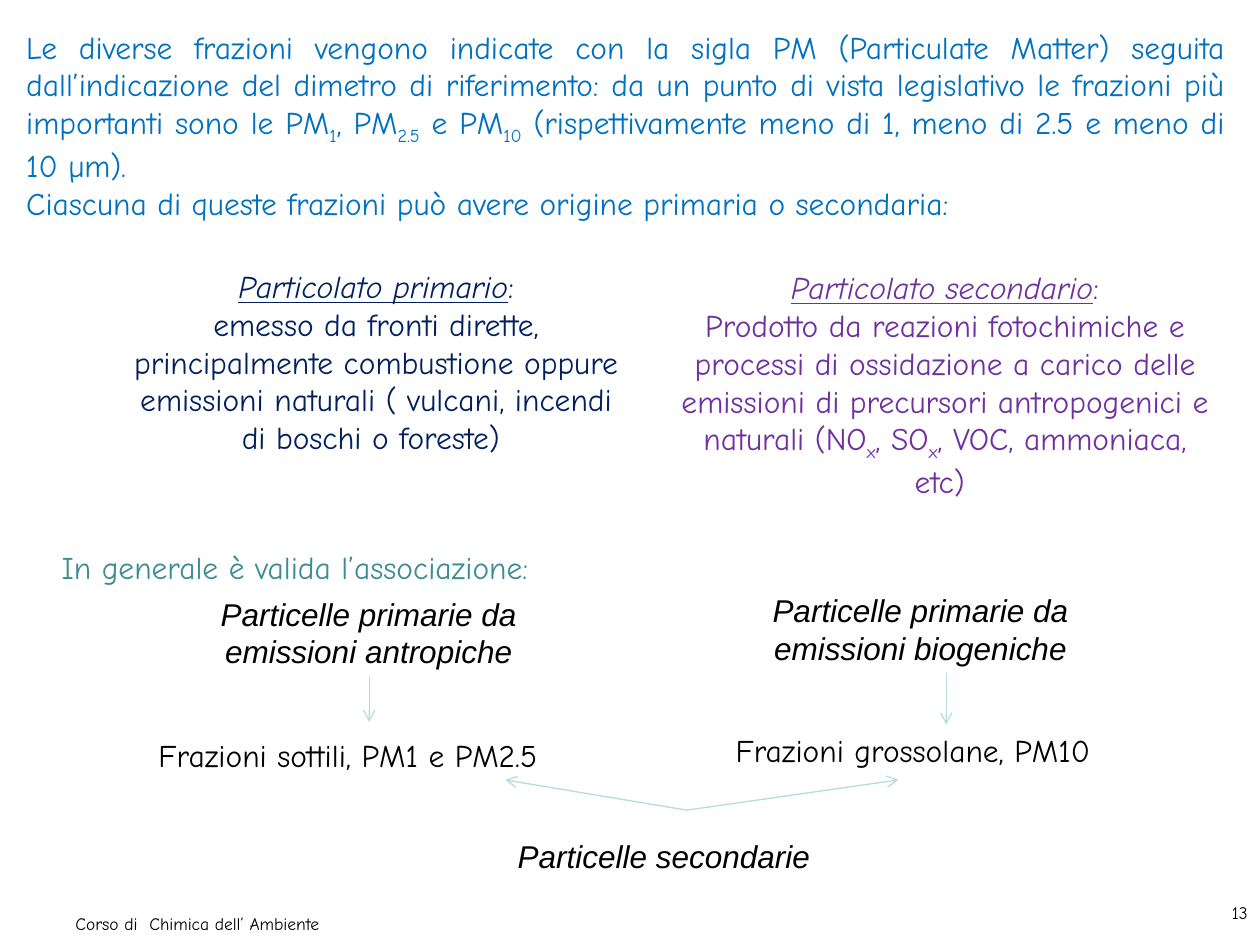
from typing import NamedTuple

from lxml import etree
from pptx import Presentation
from pptx.dml.color import RGBColor
from pptx.enum import shapes, text
from pptx.oxml import ns
from pptx.util import Inches, Pt

COMIC, ARIAL = "Comic Neue", "Arial"
BLACK, ARROW = "000000", "B6DCDF"
LEFT, CENTER = text.PP_ALIGN.LEFT, text.PP_ALIGN.CENTER
RIGHT, JUSTIFY = text.PP_ALIGN.RIGHT, text.PP_ALIGN.JUSTIFY


class Run(NamedTuple):
    text: str
    subscript: bool = False
    heading: bool = False


class Block(NamedTuple):
    left: float
    top: float
    width: float
    height: float
    paragraphs: list[list[Run]]
    color: str = BLACK
    font: str = COMIC
    size: int = 18
    align: text.PP_ALIGN = LEFT
    italic: bool = False


class Arrow(NamedTuple):
    x1: float
    y1: float
    x2: float
    y2: float


def rgb(value: str) -> RGBColor:
    return RGBColor.from_string(value)


def formula(*parts: str) -> list[Run]:
    """Alternate normal and subscript runs."""
    return [Run(part, subscript=i % 2 == 1) for i, part in enumerate(parts)]


def heading(title: str) -> list[Run]:
    return [Run(title, heading=True), Run(":")]


def add_block(s, block: Block) -> None:
    sp = s.shapes.add_textbox(Inches(block.left), Inches(block.top),
                              Inches(block.width), Inches(block.height))
    tf = sp.text_frame
    tf.word_wrap = True
    for i, runs in enumerate(block.paragraphs):
        p = tf.add_paragraph() if i else tf.paragraphs[0]
        p.alignment = block.align
        for run in runs:
            r = p.add_run()
            r.text = run.text
            r.font.name = block.font
            r.font.size = Pt(block.size)
            r.font.color.rgb = rgb(block.color)
            r.font.italic = block.italic or run.heading
            r.font.underline = run.heading
            if run.subscript:
                r.font._element.set("baseline", "-25000")


def add_arrow(s, arrow: Arrow) -> None:
    line = s.shapes.add_connector(shapes.MSO_CONNECTOR.STRAIGHT,
                                  *(Inches(v) for v in arrow))
    line.line.color.rgb = rgb(ARROW)
    line.line.width = Pt(0.75)
    etree.SubElement(line.line._get_or_add_ln(), ns.qn("a:tailEnd"), type="arrow")
    etree.SubElement(line._element.spPr, ns.qn("a:effectLst"))


BLOCKS = [
    Block(9.5, 7.11, 0.5, 0.34, [[Run("13")]], size=10, align=RIGHT),
    Block(0.5, 7.2, 4.18, 0.34, [[Run("Corso di  Chimica dell’ Ambiente")]], size=10),
    Block(0.11, 0.17, 9.71, 2.22, [
        formula("Le diverse frazioni vengono indicate con la sigla PM (Particulate Matter) "
                "seguita dall’indicazione del dimetro di riferimento: da un punto di vista "
                "legislativo le frazioni più importanti sono le PM", "1", ", PM", "2.5",
                " e PM", "10", " (rispettivamente meno di 1, meno di 2.5 e meno di 10 µm)."),
        [Run("Ciascuna di queste frazioni può avere origine primaria o secondaria: ")],
    ], "0070C0", align=JUSTIFY),
    Block(0.92, 2.07, 4.13, 2.22, [
        heading("Particolato primario"),
        [Run("emesso da fronti dirette, principalmente combustione oppure emissioni "
             "naturali ( vulcani, incendi di boschi o foreste) ")],
    ], "002060", align=CENTER),
    Block(5.25, 2.08, 4.5, 2.22, [
        heading("Particolato secondario"),
        formula("Prodotto da reazioni fotochimiche e processi di ossidazione a carico delle "
                "emissioni di precursori antropogenici e naturali (NO", "x", ", SO", "x",
                ", VOC, ammoniaca, etc) "),
    ], "7030A0", align=CENTER),
    Block(0.39, 4.3, 9.11, 0.4, [[Run("In generale è valida l’associazione:")]], "3C8C93"),
    Block(1.28, 4.67, 3.29, 0.71, [[Run("Particelle primarie da emissioni antropiche")]],
          font=ARIAL, align=CENTER, italic=True),
    Block(5.66, 4.64, 3.29, 0.71, [[Run("Particelle primarie da emissioni biogeniche")]],
          font=ARIAL, align=CENTER, italic=True),
    Block(1.16, 5.79, 3.53, 0.4, [[Run("Frazioni sottili, PM1 e PM2.5")]]),
    Block(5.74, 5.75, 3.53, 0.4, [[Run("Frazioni grossolane, PM10")]]),
    Block(4.01, 6.59, 4.81, 0.4, [[Run("Particelle secondarie")]], font=ARIAL, italic=True),
]

ARROWS = [
    Arrow(2.93, 5.37, 2.93, 5.73),
    Arrow(7.51, 5.34, 7.51, 5.75),
    Arrow(5.45, 6.43, 7.13, 6.19),
    Arrow(5.45, 6.43, 4.01, 6.19),
]


def main() -> None:
    prs = Presentation()
    prs.slide_width, prs.slide_height = Inches(10), Inches(7.5)
    s = prs.slides.add_slide(prs.slide_layouts[6])
    for block in BLOCKS:
        add_block(s, block)
    for arrow in ARROWS:
        add_arrow(s, arrow)
    prs.save("out.pptx")


if __name__ == "__main__":
    main()
